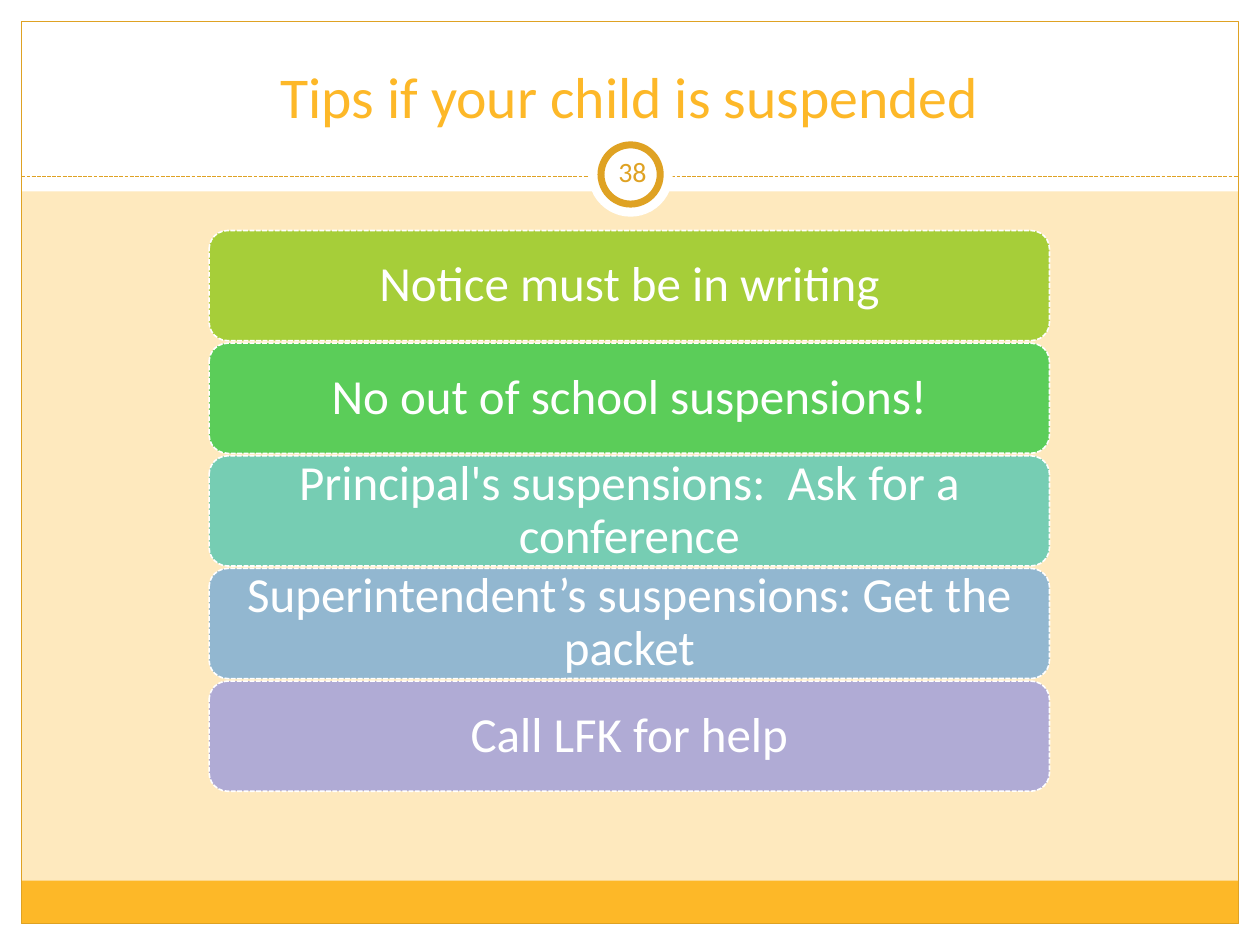
from dataclasses import dataclass

from lxml import etree
from pptx import Presentation
from pptx.dml.color import RGBColor
from pptx.enum import dml, shapes, text
from pptx.oxml import ns
from pptx.util import Inches, Pt


@dataclass(frozen=True)
class Theme:
    """Colours, font and type sizes of the slide."""
    font: str = "Calibri"
    background: str = "FEE9BE"
    white: str = "FFFFFF"
    accent: str = "FDB828"
    outline: str = "DFA223"
    tips: tuple = ("A6CE39", "5BCD59", "76CDB3", "92B7D0", "B0ABD5")
    title_size: int = 33
    tip_size: int = 28
    number_size: int = 16


THEME = Theme()
TIPS = (
    "Notice must be in writing",
    "No out of school suspensions!",
    "Principal's suspensions:  Ask for a conference",
    "Superintendent’s suspensions: Get the packet",
    "Call LFK for help",
)


def style_line(line, color, width, dashed=False):
    """Set the colour, width and optional dash of a line."""
    line.color.rgb = RGBColor.from_string(color)
    line.width = Pt(width)
    if dashed:
        line.dash_style = dml.MSO_LINE.SQUARE_DOT


def add_box(slide, kind, box, fill=None, line=None, width=0.75, dashed=False):
    """Add a flat preset shape in a box given in inches."""
    shape = slide.shapes.add_shape(kind, *map(Inches, box))
    shape.shadow.inherit = False
    if fill:
        shape.fill.solid()
        shape.fill.fore_color.rgb = RGBColor.from_string(fill)
    else:
        shape.fill.background()
    if line:
        style_line(shape.line, line, width, dashed)
    else:
        shape.line.fill.background()
    return shape


def write_text(shape, words, size, color, anchor, inset=None):
    """Write one centred paragraph into a shape."""
    frame = shape.text_frame
    frame.word_wrap = True
    frame.vertical_anchor = anchor
    if inset is not None:
        frame.margin_left = frame.margin_right = Inches(inset)
        frame.margin_top = frame.margin_bottom = Inches(inset)
    paragraph = frame.paragraphs[0]
    paragraph.text = words
    paragraph.alignment = text.PP_ALIGN.CENTER
    paragraph.font.name = THEME.font
    paragraph.font.size = Pt(size)
    paragraph.font.color.rgb = RGBColor.from_string(color)
    return paragraph


def add_frame(slide, box, header_bottom, footer_height):
    """Draw the white margins, footer band and outline around the box."""
    left, top, width, height = box
    right, bottom = left + width, top + height
    rectangle = shapes.MSO_SHAPE.RECTANGLE
    margins = (
        (0, bottom, 10, 7.5 - bottom),
        (0, 0, 10, header_bottom),
        (0, 0, left, 7.5),
        (right, 0, 10 - right, 7.5),
    )
    for margin in margins:
        add_box(slide, rectangle, margin, THEME.white)
    footer = (left, bottom - footer_height, width, footer_height)
    add_box(slide, rectangle, footer, THEME.accent)
    add_box(slide, rectangle, box, line=THEME.outline)


def add_divider(slide, left, right, y):
    """Draw the dashed line under the title."""
    ends = map(Inches, (left, y, right, y))
    divider = slide.shapes.add_connector(shapes.MSO_CONNECTOR.STRAIGHT, *ends)
    style_line(divider.line, THEME.outline, 0.75, dashed=True)
    etree.SubElement(divider._element.spPr, ns.qn("a:effectLst"))


def add_title(slide, box, words):
    """Place the slide title at the bottom of its box."""
    title = slide.shapes.add_textbox(*map(Inches, box))
    write_text(title, words, THEME.title_size, THEME.accent,
               text.MSO_ANCHOR.BOTTOM)


def add_number_badge(slide, box, number):
    """Draw the ringed slide number on a white disc."""
    left, top, width, height = box
    gap = 0.1
    ring = (left + gap, top + gap, width - 2 * gap, height - 2 * gap)
    add_box(slide, shapes.MSO_SHAPE.OVAL, box, THEME.white)
    add_box(slide, shapes.MSO_SHAPE.OVAL, ring, THEME.white, THEME.outline, 4)
    label_box = (left + gap, top + 0.07, 0.5, 0.48)
    label = slide.shapes.add_textbox(*map(Inches, label_box))
    write_text(label, number, THEME.number_size, THEME.outline,
               text.MSO_ANCHOR.MIDDLE, 0.05)


def add_tips(slide, box, tips, gap):
    """Stack one rounded bar per tip, evenly spaced in the box."""
    left, top, width, height = box
    pitch = (height + gap) / len(tips)
    for index, (words, color) in enumerate(zip(tips, THEME.tips)):
        bar_box = (left, top + index * pitch, width, pitch - gap)
        bar = add_box(slide, shapes.MSO_SHAPE.ROUNDED_RECTANGLE, bar_box,
                      color, THEME.white, 0.9, dashed=True)
        paragraph = write_text(bar, words, THEME.tip_size, THEME.white,
                               text.MSO_ANCHOR.MIDDLE, 0.12)
        paragraph.line_spacing = 0.9


def main():
    """Build and save the slide."""
    presentation = Presentation()
    presentation.slide_width = Inches(10)
    presentation.slide_height = Inches(7.5)
    slide = presentation.slides.add_slide(presentation.slide_layouts[6])
    slide.background.fill.solid()
    slide.background.fill.fore_color.rgb = RGBColor.from_string(THEME.background)
    add_frame(slide, (0.17, 0.17, 9.66, 7.16), 1.52, 0.34)
    add_divider(slide, 0.17, 9.83, 1.4)
    add_title(slide, (0.33, 0.25, 9.33, 0.83), "Tips if your child is suspended")
    add_tips(slide, (1.66, 1.83, 6.67, 4.45), TIPS, 0.02)
    add_number_badge(slide, (4.67, 1.05, 0.67, 0.67), "38")
    presentation.save("out.pptx")


if __name__ == "__main__":
    main()
